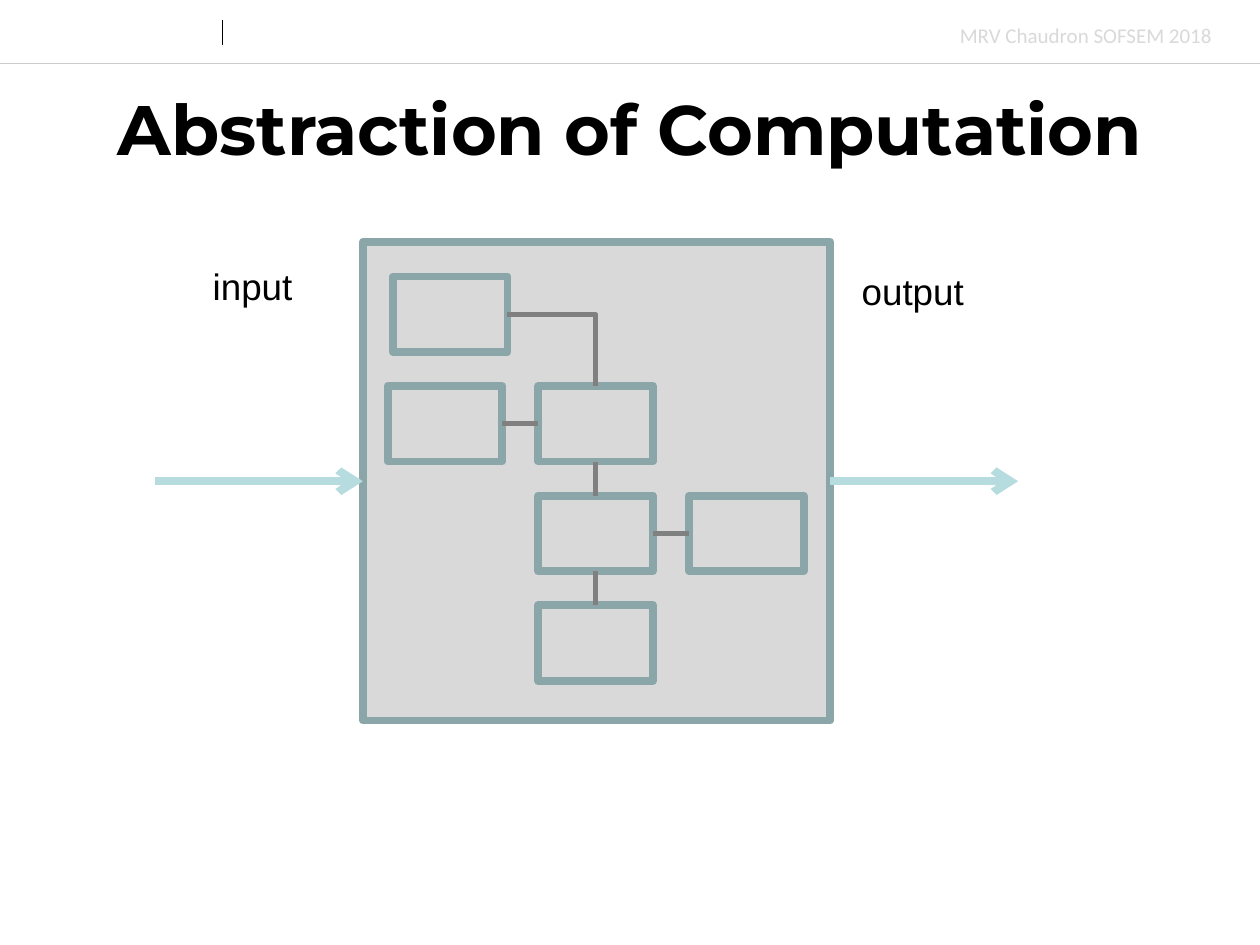
from dataclasses import dataclass

from lxml.etree import SubElement
from pptx import Presentation
from pptx.dml.color import RGBColor
from pptx.enum.shapes import MSO_CONNECTOR as Route, MSO_SHAPE as Preset
from pptx.enum.text import MSO_ANCHOR as Anchor, MSO_AUTO_SIZE as AutoSize, PP_ALIGN as Align
from pptx.oxml.ns import qn
from pptx.shapes.autoshape import Shape
from pptx.shapes.connector import Connector
from pptx.slide import Slide
from pptx.util import Pt


@dataclass(frozen=True)
class Theme:
    black: str = "000000"
    panel: str = "D9D9D9"
    border: str = "8AA6A8"
    flow: str = "B6DCDF"
    link: str = "808080"
    rule: str = "CCCCCC"
    title_size: float = 40
    label_size: float = 21
    header_size: float = 12
    heavy: float = 4.5
    medium: float = 3
    body_font: str = "Arial"
    title_font: str = "Montserrat"
    header_font: str = "Calibri"


@dataclass(frozen=True)
class Box:
    left: float
    top: float
    width: float
    height: float


@dataclass(frozen=True)
class Module:
    column: int
    row: int
    indent: float = 0


@dataclass(frozen=True)
class Link:
    start: str
    start_side: int
    end: str
    end_side: int
    bent: bool = False


THEME = Theme()
TOP, LEFT, BOTTOM, RIGHT = range(4)
SLIDE_WIDTH, SLIDE_HEIGHT = 720, 540
FRAME = Box(207.4, 138.2, 267.1, 273.6)
FLOW_Y = FRAME.top + FRAME.height / 2

# Grid of modules inside the frame
GRID_LEFT, GRID_TOP = 221.5, 158
COLUMN_STEP, ROW_STEP = 86.1, 62.6
MODULE_WIDTH, MODULE_HEIGHT = 65.5, 43.2

MODULES = {
    "source": Module(0, 0, indent=3),
    "helper": Module(0, 1),
    "hub": Module(1, 1),
    "core": Module(1, 2),
    "sink": Module(1, 3),
    "side": Module(2, 2),
}
LINKS = [
    Link("source", RIGHT, "hub", TOP, bent=True),
    Link("helper", RIGHT, "hub", LEFT),
    Link("core", RIGHT, "side", LEFT),
    Link("hub", BOTTOM, "core", TOP),
    Link("core", BOTTOM, "sink", TOP),
]


def add_text(slide: Slide, text: str, box: Box, *, size: float, font: str = THEME.body_font,
             color: str = THEME.black, bold: bool = False, align: Align = Align.LEFT,
             anchor: Anchor = Anchor.TOP, wrap: bool = False) -> None:
    frame = slide.shapes.add_textbox(
        Pt(box.left), Pt(box.top), Pt(box.width), Pt(box.height)).text_frame
    frame.word_wrap = wrap
    frame.auto_size = AutoSize.NONE if wrap else AutoSize.SHAPE_TO_FIT_TEXT
    frame.vertical_anchor = anchor
    paragraph = frame.paragraphs[0]
    paragraph.alignment = align
    run = paragraph.add_run()
    run.text = text
    run.font.size, run.font.name, run.font.bold = Pt(size), font, bold
    run.font.color.rgb = RGBColor.from_string(color)


def add_panel(slide: Slide, box: Box) -> Shape:
    panel = slide.shapes.add_shape(
        Preset.RECTANGLE, Pt(box.left), Pt(box.top), Pt(box.width), Pt(box.height))
    panel.shadow.inherit = False
    panel.fill.solid()
    panel.fill.fore_color.rgb = RGBColor.from_string(THEME.panel)
    panel.line.color.rgb = RGBColor.from_string(THEME.border)
    panel.line.width = Pt(THEME.heavy)
    return panel


def add_line(slide: Slide, color: str, weight: float, x1: float = 0, y1: float = 0,
             x2: float = 0, y2: float = 0, arrow: bool = False, bent: bool = False) -> Connector:
    route = Route.ELBOW if bent else Route.STRAIGHT
    line = slide.shapes.add_connector(route, Pt(x1), Pt(y1), Pt(x2), Pt(y2))
    line.line.color.rgb = RGBColor.from_string(color)
    line.line.width = Pt(weight)
    properties = line._element.spPr
    if bent:  # a single corner
        properties.find(qn("a:prstGeom")).set("prst", "bentConnector2")
    if arrow:
        SubElement(properties.find(qn("a:ln")), qn("a:tailEnd"), type="arrow")
    SubElement(properties, qn("a:effectLst"))
    return line


def add_module(slide: Slide, module: Module) -> Shape:
    return add_panel(slide, Box(GRID_LEFT + module.column * COLUMN_STEP + module.indent,
                                GRID_TOP + module.row * ROW_STEP,
                                MODULE_WIDTH, MODULE_HEIGHT))


def add_link(slide: Slide, link: Link, modules: dict[str, Shape]) -> None:
    line = add_line(slide, THEME.link, THEME.medium, bent=link.bent)
    line.begin_connect(modules[link.start], link.start_side)
    line.end_connect(modules[link.end], link.end_side)


def main() -> None:
    deck = Presentation()
    deck.slide_width, deck.slide_height = Pt(SLIDE_WIDTH), Pt(SLIDE_HEIGHT)
    slide = deck.slides.add_slide(deck.slide_layouts[6])

    # Header
    add_line(slide, THEME.rule, 0.25, 0, 36, SLIDE_WIDTH, 36)
    add_line(slide, THEME.black, 0.5, 127.4, 11.5, 127.4, 26)
    add_text(slide, "MRV Chaudron SOFSEM 2018", Box(541.4, 9.4, 159.8, 21.6),
             size=THEME.header_size, font=THEME.header_font, color=THEME.panel)

    # Frame and title
    frame = add_panel(slide, FRAME)
    add_text(slide, "Abstraction of Computation", Box(0, 43.2, SLIDE_WIDTH, 59.8),
             size=THEME.title_size, font=THEME.title_font, bold=True,
             align=Align.CENTER, anchor=Anchor.MIDDLE, wrap=True)

    # Input and output
    input_flow = add_line(slide, THEME.flow, THEME.heavy, 88.6, FLOW_Y, FRAME.left, FLOW_Y,
                          arrow=True)
    input_flow.end_connect(frame, LEFT)
    add_text(slide, "input", Box(114.5, 146.9, 59.8, 32.4), size=THEME.label_size)
    output_flow = add_line(slide, THEME.flow, THEME.heavy, FRAME.left + FRAME.width, FLOW_Y,
                           581.8, FLOW_Y, arrow=True)
    output_flow.begin_connect(frame, RIGHT)
    add_text(slide, "output", Box(485.3, 149.8, 73.4, 32.4), size=THEME.label_size)

    # Modules and their links
    modules = {name: add_module(slide, module) for name, module in MODULES.items()}
    for link in LINKS:
        add_link(slide, link, modules)

    deck.save("out.pptx")


if __name__ == "__main__":
    main()
